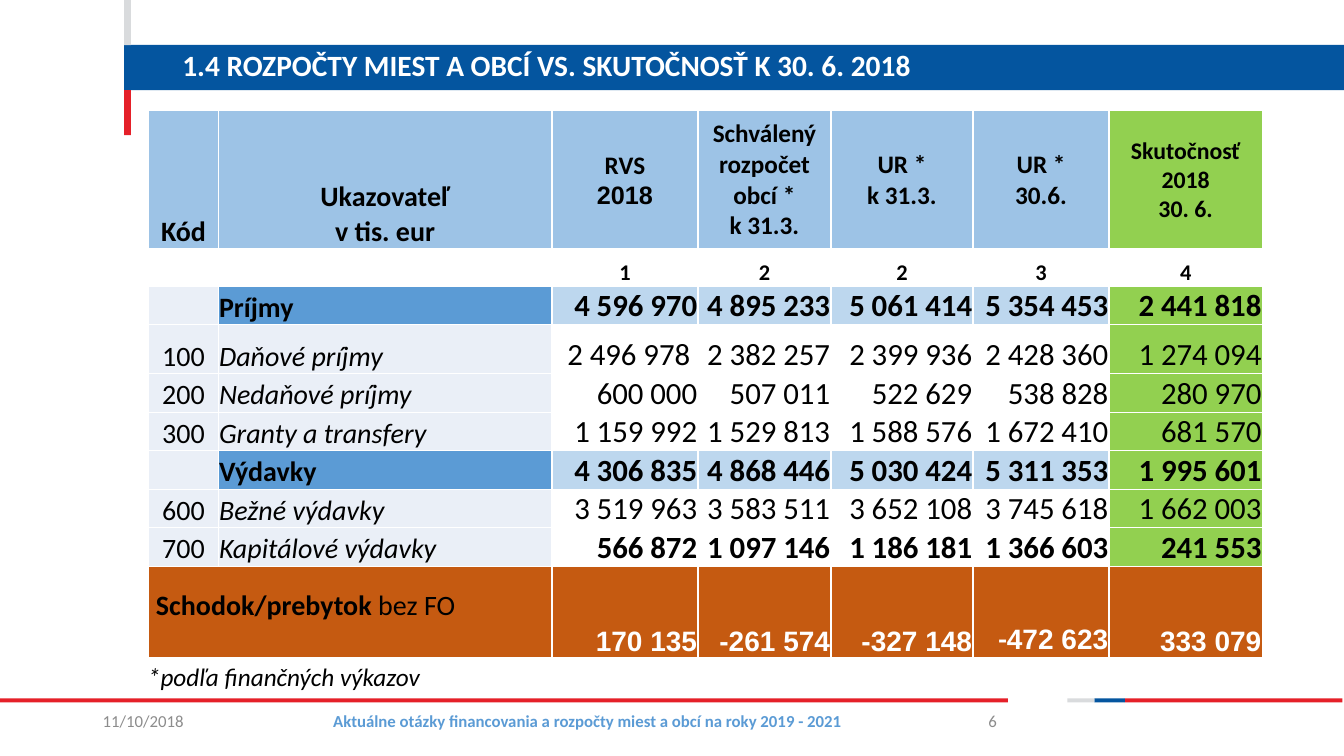
import pptx
import pptx.dml.color
import pptx.enum.shapes
import pptx.enum.text
import pptx.oxml
import pptx.oxml.ns
import pptx.util
from pptx.util import Cm

ALIGN = pptx.enum.text.PP_ALIGN
ANCHOR = pptx.enum.text.MSO_ANCHOR
BLUE, RED, GREY = "04559F", "E52029", "D9DBDD"
HEADER, GREEN, ORANGE = "9DC3E6", "92D050", "C55A11"
SECTION, SECTION_VALUE, PALE = "5B9BD5", "BDD7EE", "EAEFF7"
WHITE, BLACK, MUTED = "FFFFFF", "000000", "8C8C8C"

HEADINGS = ["Kód", "Ukazovateľ\nv tis. eur", "RVS\n2018", "Schválený rozpočet obcí *\nk 31.3.",
            "UR *\nk 31.3.", "UR *\n30.6.", "Skutočnosť 2018\n30. 6."]
NUMBERING = ["", "", "1", "2", "2", "3", "4"]
BUDGET = [
    ["", "Príjmy", "4 596 970", "4 895 233", "5 061 414", "5 354 453", "2 441 818"],
    ["100", "Daňové príjmy", "2 496 978 ", "2 382 257", "2 399 936", "2 428 360", "1 274 094"],
    ["200", "Nedaňové príjmy", "600 000", "507 011", "522 629", "538 828", "280 970"],
    ["300", "Granty a transfery", "1 159 992", "1 529 813", "1 588 576", "1 672 410", "681 570"],
    ["", "Výdavky", "4 306 835", "4 868 446", "5 030 424", "5 311 353", "1 995 601"],
    ["600", "Bežné výdavky", "3 519 963", "3 583 511", "3 652 108", "3 745 618", "1 662 003"],
    ["700", "Kapitálové výdavky", "566 872", "1 097 146", "1 186 181", "1 366 603", "241 553"],
]
BALANCE = ["170 135", "-261 574", "-327 148", "-", "333 079"]
COLUMN_WIDTHS = [1.75, 8.41, 3.68, 3.35, 3.58, 3.43, 3.86]
ROW_HEIGHTS = [3.48, 0.94, 0.97, 1.24, 0.97, 0.97, 0.97, 0.97, 0.97, 2.29]


def colour(value):
    return pptx.dml.color.RGBColor.from_string(value)


class BudgetSlide:
    font = "Calibri"

    def __init__(self, presentation):
        self.slide = presentation.slides.add_slide(presentation.slide_layouts[5])

    def style(self, run, size, color=BLACK, bold=False, italic=False, font=None):
        run.font.name = font or self.font
        run.font.size = pptx.util.Pt(size)
        run.font.bold = bold
        run.font.italic = italic
        run.font.color.rgb = colour(color)

    def set_text(self, frame, text, size, align=ALIGN.LEFT, **look):
        frame.text = text
        for paragraph in frame.paragraphs:
            paragraph.alignment = align
            for run in paragraph.runs:
                self.style(run, size, **look)

    def extend_cell(self, cell, text, size, **look):
        run = cell.text_frame.paragraphs[0].add_run()
        run.text = text
        self.style(run, size, **look)

    def bar(self, left, top, width, height, fill):
        bar = self.slide.shapes.add_shape(pptx.enum.shapes.MSO_SHAPE.RECTANGLE,
                                          Cm(left), Cm(top), Cm(width), Cm(height))
        bar.shadow.inherit = False
        bar.fill.solid()
        bar.fill.fore_color.rgb = colour(fill)
        bar.line.fill.background()

    def title(self, text, left, top, width, height):
        title = self.slide.shapes.title
        title.left, title.top, title.width, title.height = Cm(left), Cm(top), Cm(width), Cm(height)
        self.set_text(title.text_frame, text, 21, color=WHITE, bold=True)
        title.text_frame.vertical_anchor = ANCHOR.MIDDLE
        title.text_frame.paragraphs[0].line_spacing = 0.9
        self.slide.shapes.element.append(title.element)

    def label(self, text, left, top, width, size, anchor=ANCHOR.MIDDLE, **look):
        frame = self.slide.shapes.add_textbox(Cm(left), Cm(top), Cm(width), Cm(1.02)).text_frame
        frame.word_wrap = True
        frame.vertical_anchor = anchor
        self.set_text(frame, text, size, **look)

    def table(self, left, top, widths, heights):
        table = self.slide.shapes.add_table(len(heights), len(widths), Cm(left), Cm(top),
                                            Cm(sum(widths)), Cm(sum(heights))).table
        table.first_row = table.horz_banding = False
        for column, width in zip(table.columns, widths):
            column.width = Cm(width)
        for row, height in zip(table.rows, heights):
            row.height = Cm(height)
        return table

    def cell(self, cell, text, size, fill=None, anchor=ANCHOR.BOTTOM, **look):
        cell.margin_left = cell.margin_right = cell.margin_top = Cm(0.02)
        cell.margin_bottom = 0
        cell.vertical_anchor = anchor
        for side in "LRTB":
            cell._tc.get_or_add_tcPr().append(pptx.oxml.parse_xml(
                f'<a:ln{side} {pptx.oxml.ns.nsdecls("a")} w="12700"><a:solidFill>'
                f'<a:srgbClr val="{WHITE}"/></a:solidFill></a:ln{side}>'))
        if fill:
            cell.fill.solid()
            cell.fill.fore_color.rgb = colour(fill)
        else:
            cell.fill.background()
        self.set_text(cell.text_frame, text, size, **look)


def fill_budget(page, table):
    last = len(COLUMN_WIDTHS) - 1
    for column, (heading, number) in enumerate(zip(HEADINGS, NUMBERING)):
        page.cell(table.cell(0, column), heading,
                  20 if column < 2 else 17 if column == last else 18,
                  GREEN if column == last else HEADER,
                  ANCHOR.BOTTOM if column < 2 else ANCHOR.MIDDLE, align=ALIGN.CENTER, bold=True)
        page.cell(table.cell(1, column), number, 16, align=ALIGN.CENTER, bold=True)
    year = table.cell(0, 2).text_frame.paragraphs[1].runs[0]
    page.style(year, 18, bold=True, font="Arial")

    for row, (code, name, *amounts) in enumerate(BUDGET, 2):
        section = code == ""
        page.cell(table.cell(row, 0), code, 20, PALE, align=ALIGN.CENTER)
        page.cell(table.cell(row, 1), name, 20, SECTION if section else PALE,
                  bold=section, italic=not section)
        for column, amount in enumerate(amounts, 2):
            fill = GREEN if column == last else SECTION_VALUE if section else WHITE
            page.cell(table.cell(row, column), amount, 22, fill, align=ALIGN.RIGHT,
                      bold=section or code == "700")

    bottom = len(ROW_HEIGHTS) - 1
    balance = table.cell(bottom, 0)
    balance.merge(table.cell(bottom, 1))
    page.cell(balance, "Schodok/prebytok", 20, ORANGE, bold=True)
    page.extend_cell(balance, " bez FO", 20)
    balance.margin_left, balance.margin_bottom = Cm(0.18), Cm(0.86)
    for column, amount in enumerate(BALANCE, 2):
        page.cell(table.cell(bottom, column), amount, 20, ORANGE, align=ALIGN.RIGHT,
                  color=WHITE, bold=True, font="Calibri" if amount == "-" else "Arial")
    page.extend_cell(table.cell(bottom, 5), "472 623", 20, color=WHITE, bold=True, font="Arial")


def main():
    presentation = pptx.Presentation()
    presentation.slide_width, presentation.slide_height = Cm(33.87), Cm(19.05)
    page = BudgetSlide(presentation)

    page.bar(3.13, 1.13, 30.74, 1.14, BLUE)
    for left, width, fill in [(28.35, 5.48, RED), (27.58, 0.77, BLUE),
                              (26.9, 0.68, GREY), (0, 25.4, RED)]:
        page.bar(left, 17.6, width, 0.1, fill)
    for top, fill in [(2.27, RED), (0, GREY)]:
        page.bar(3.13, top, 0.17, 1.14, fill)

    page.title("1.4 ROZPOČTY MIEST A OBCÍ VS. SKUTOČNOSŤ K 30. 6. 2018", 4.34, 1.14, 27.99, 1.12)
    page.label("11/10/2018", 2.34, 17.65, 3.23, 12, color=MUTED)
    page.label("Aktuálne otázky financovania a rozpočty miest a obcí na roky 2019 - 2021",
               6.96, 17.65, 15.7, 12, align=ALIGN.CENTER, color=SECTION, bold=True)
    page.label("6", 23.16, 17.65, 2.21, 12, align=ALIGN.RIGHT, color=MUTED)
    fill_budget(page, page.table(3.75, 2.79, COLUMN_WIDTHS, ROW_HEIGHTS))
    page.label("*podľa finančných výkazov", 3.48, 16.54, 9.63, 18, ANCHOR.TOP, italic=True)
    presentation.save("out.pptx")


if __name__ == "__main__":
    main()
